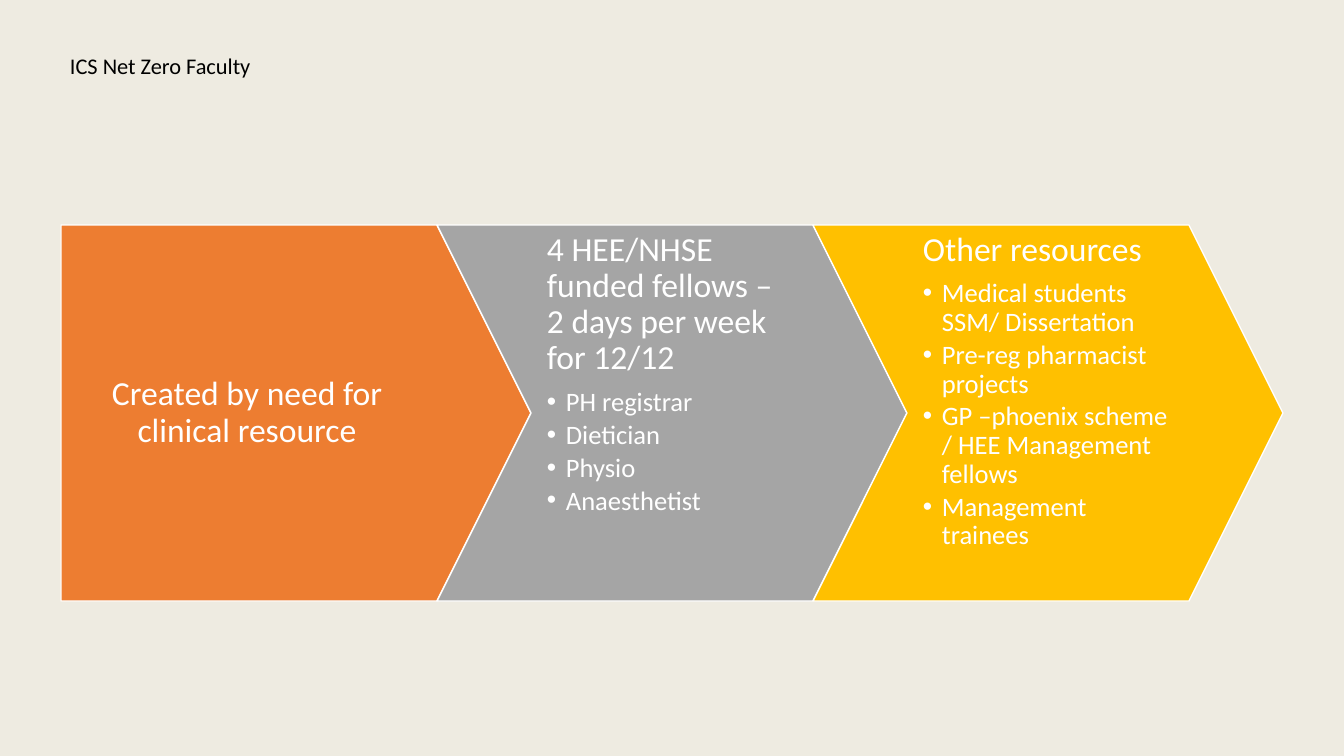
"""Build the ICS Net Zero Faculty slide with its row of three process arrows."""
from dataclasses import dataclass

from lxml import etree
from pptx import Presentation
from pptx import util as u
from pptx.dml.color import RGBColor
from pptx.enum import shapes, text
from pptx.oxml import ns

SLIDE_WIDTH, SLIDE_HEIGHT = 1344, 756
EMU_PER_PX = 12192000 / SLIDE_WIDTH
FONT = "Calibri"
COLOURS = {
    "background": "EEEBE1",
    "black": "000000",
    "white": "FFFFFF",
    "orange": "ED7D31",
    "grey": "A5A5A5",
    "yellow": "FFC000",
}
ARROW_LEFT, ARROW_TOP = 61, 225
ARROW_HEIGHT, ARROW_POINT = 376, 94
ARROW_STEP = 376
BULLET_INDENT = 19


@dataclass(frozen=True)
class Box:
    left: int
    top: int
    width: int
    height: int

    def emu(self) -> tuple:
        return tuple(px(value) for value in (self.left, self.top, self.width, self.height))


@dataclass(frozen=True)
class Stage:
    colour: str
    heading: str
    bullets: tuple[str, ...] = ()
    starts_row: bool = False


STAGES = (
    Stage("orange", "Created by need for clinical resource", starts_row=True),
    Stage(
        "grey",
        "4 HEE/NHSE funded fellows – 2 days per week for 12/12",
        ("PH registrar", "Dietician", "Physio", "Anaesthetist"),
    ),
    Stage(
        "yellow",
        "Other resources",
        (
            "Medical students SSM/ Dissertation",
            "Pre-reg pharmacist projects",
            "GP –phoenix scheme / HEE Management fellows",
            "Management trainees",
        ),
    ),
)


def px(value: int) -> u.Emu:
    return u.Emu(round(value * EMU_PER_PX))


def rgb(name: str) -> RGBColor:
    return RGBColor.from_string(COLOURS[name])


def add_frame(slide, box: Box, insets: tuple[int, int, int, int], anchor):
    frame = slide.shapes.add_textbox(*box.emu()).text_frame
    frame.word_wrap = True
    frame.vertical_anchor = anchor
    frame.margin_left, frame.margin_top, frame.margin_right, frame.margin_bottom = map(px, insets)
    return frame


def write(frame, wording: str, *, size: float, colour: str = "white", after: float = 0,
          align=text.PP_ALIGN.LEFT, bullet: bool = False) -> None:
    first = frame.paragraphs[0]
    paragraph = frame.add_paragraph() if first.runs else first
    paragraph.alignment = align
    paragraph.line_spacing = 0.9
    paragraph.space_after = u.Pt(after)
    run = paragraph.add_run()
    run.text = wording
    run.font.name = FONT
    run.font.size = u.Pt(size)
    run.font.color.rgb = rgb(colour)
    if bullet:
        paragraph.level = 1
        properties = paragraph._p.get_or_add_pPr()
        properties.set("marL", str(px(BULLET_INDENT)))
        properties.set("indent", str(-px(BULLET_INDENT)))
        etree.SubElement(properties, ns.qn("a:buFont"), typeface="Arial")
        etree.SubElement(properties, ns.qn("a:buChar"), char="•")


def add_arrow(slide, stage: Stage, left: int) -> None:
    kind = shapes.MSO_SHAPE.PENTAGON if stage.starts_row else shapes.MSO_SHAPE.CHEVRON
    box = Box(left, ARROW_TOP, ARROW_STEP + ARROW_POINT, ARROW_HEIGHT)
    shape = slide.shapes.add_shape(kind, *box.emu())
    shape.adjustments[0] = ARROW_POINT / ARROW_HEIGHT
    shape.shadow.inherit = False
    shape.fill.solid()
    shape.fill.fore_color.rgb = rgb(stage.colour)
    shape.line.color.rgb = rgb("white")
    shape.line.width = u.Pt(1)


def add_stage_text(slide, stage: Stage, left: int) -> None:
    if stage.starts_row:
        box = Box(left, ARROW_TOP, ARROW_STEP + ARROW_POINT // 2, ARROW_HEIGHT)
        insets, anchor, align = (16, 7, 67, 7), text.MSO_ANCHOR.MIDDLE, text.PP_ALIGN.CENTER
    else:
        box = Box(left + ARROW_POINT, ARROW_TOP, ARROW_STEP - ARROW_POINT, ARROW_HEIGHT)
        insets, anchor, align = (16, 7, 16, 7), text.MSO_ANCHOR.TOP, text.PP_ALIGN.LEFT
    frame = add_frame(slide, box, insets, anchor)
    write(frame, stage.heading, size=24, after=8.4, align=align)
    for bullet in stage.bullets:
        write(frame, bullet, size=19, after=2.85, bullet=True)


def main() -> None:
    presentation = Presentation()
    presentation.slide_width, presentation.slide_height = px(SLIDE_WIDTH), px(SLIDE_HEIGHT)
    slide = presentation.slides.add_slide(presentation.slide_layouts[6])
    slide.background.fill.solid()
    slide.background.fill.fore_color.rgb = rgb("background")
    title = add_frame(slide, Box(60, 50, 1223, 35), (10, 5, 10, 5), text.MSO_ANCHOR.MIDDLE)
    write(title, "ICS Net Zero Faculty", size=16, colour="black")
    for index, stage in enumerate(STAGES):
        left = ARROW_LEFT + index * ARROW_STEP
        add_arrow(slide, stage, left)
        add_stage_text(slide, stage, left)
    presentation.save("out.pptx")


if __name__ == "__main__":
    main()
